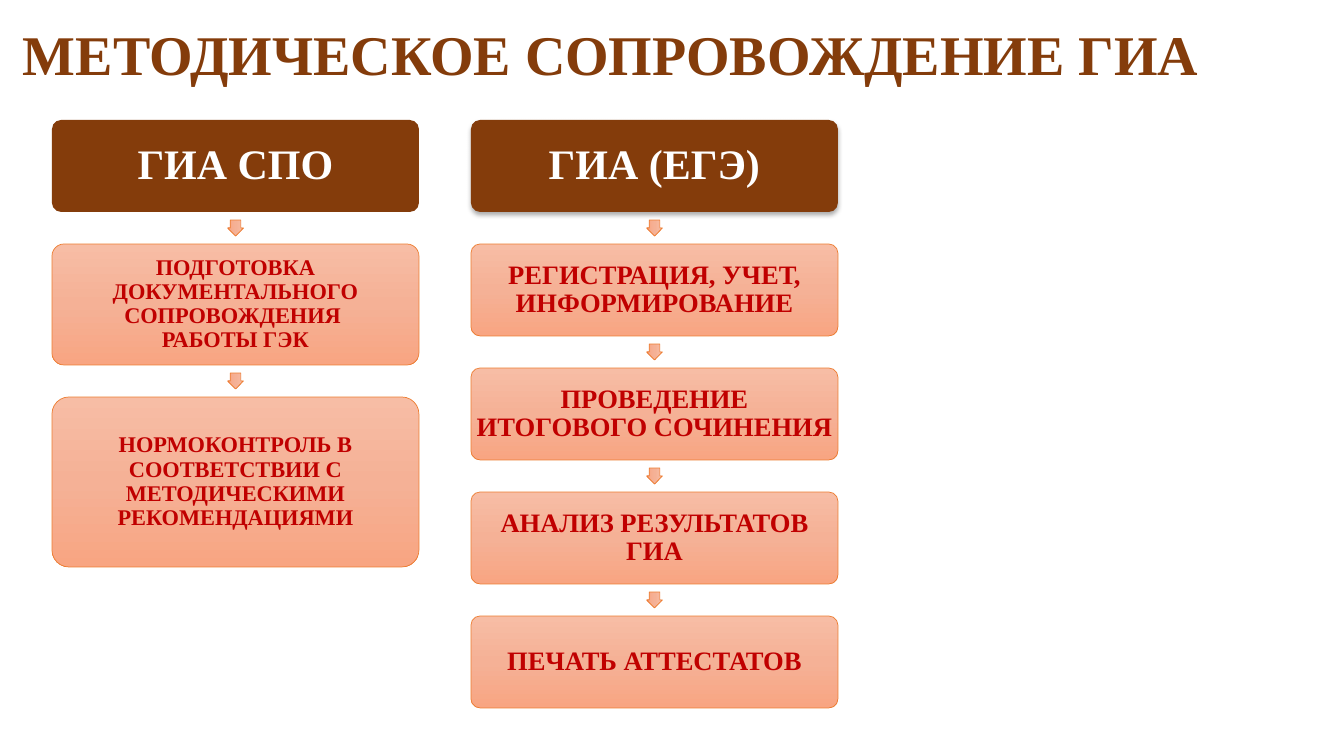
from copy import deepcopy
from dataclasses import dataclass

from lxml import etree
from pptx import Presentation
from pptx.dml.color import RGBColor
from pptx.enum.shapes import MSO_SHAPE
from pptx.enum.text import MSO_ANCHOR, PP_ALIGN
from pptx.oxml.ns import qn
from pptx.util import Emu, Pt

ROUNDED, ARROW = MSO_SHAPE.ROUNDED_RECTANGLE, MSO_SHAPE.RIGHT_ARROW
LEFT, CENTER = PP_ALIGN.LEFT, PP_ALIGN.CENTER
TOP, MIDDLE = MSO_ANCHOR.TOP, MSO_ANCHOR.MIDDLE

BROWN = RGBColor(0x84, 0x3C, 0x0B)
WHITE = RGBColor(0xFF, 0xFF, 0xFF)
RED = RGBColor(0xC0, 0x00, 0x00)
ORANGE = RGBColor(0xED, 0x7D, 0x31)
PEACH = (RGBColor(0xF7, 0xBD, 0xA5), RGBColor(0xF5, 0xB1, 0x96), RGBColor(0xF8, 0xA5, 0x82))

FONT = "Times New Roman"
EMU_PER_PX = 914400 / 100.8
COLUMN_TOP, COLUMN_WIDTH = 120, 367
HEADER_HEIGHT, GAP, ARROW_SIZE = 92, 32, 16


@dataclass
class Step:
    text: str
    height: int = HEADER_HEIGHT


@dataclass
class Column:
    header: str
    left: int
    step_size: int
    steps: list[Step]
    shadow: bool = False


COLUMNS = [
    Column("ГИА СПО", 52, 16, [
        Step("ПОДГОТОВКА ДОКУМЕНТАЛЬНОГО СОПРОВОЖДЕНИЯ \vРАБОТЫ ГЭК", 121),
        Step("НОРМОКОНТРОЛЬ В СООТВЕТСТВИИ С МЕТОДИЧЕСКИМИ РЕКОМЕНДАЦИЯМИ", 170),
    ]),
    Column("ГИА (ЕГЭ)", 471, 19, [
        Step("РЕГИСТРАЦИЯ, УЧЕТ, ИНФОРМИРОВАНИЕ"),
        Step("ПРОВЕДЕНИЕ ИТОГОВОГО СОЧИНЕНИЯ"),
        Step("АНАЛИЗ РЕЗУЛЬТАТОВ ГИА"),
        Step("ПЕЧАТЬ АТТЕСТАТОВ"),
    ], shadow=True),
]


def px(value: float) -> Emu:
    return Emu(round(value * EMU_PER_PX))


def write(shape, text: str, *, size: int, color: RGBColor, align=CENTER,
          anchor=MIDDLE, inset_x: int = 2, inset_y: int = 2) -> None:
    frame = shape.text_frame
    frame.word_wrap = True
    frame.vertical_anchor = anchor
    frame.margin_left = frame.margin_right = px(inset_x)
    frame.margin_top = frame.margin_bottom = px(inset_y)
    frame.text = text
    paragraph = frame.paragraphs[0]
    paragraph.alignment = align
    paragraph.line_spacing = 0.9
    for run in paragraph.runs:
        run.font.name = FONT
        run.font.size = Pt(size)
        run.font.bold = True
        run.font.color.rgb = color


def fill_peach(shape) -> None:
    fill = shape.fill
    fill.gradient()
    fill.gradient_angle = 270
    # A middle stop joins the two default ones
    stop_list = shape.element.spPr.find(f"{qn('a:gradFill')}/{qn('a:gsLst')}")
    stop_list.insert(1, deepcopy(stop_list[0]))
    for stop, color, position in zip(fill.gradient_stops, PEACH, (0, 0.5, 1)):
        stop.color.rgb = color
        stop.position = position
    shape.line.color.rgb = ORANGE
    shape.line.width = Pt(0.5)


def add_box(slide, left: int, top: int, height: int):
    box = slide.shapes.add_shape(ROUNDED, px(left), px(top), px(COLUMN_WIDTH), px(height))
    box.adjustments[0] = 0.1
    box.shadow.inherit = False
    return box


def add_soft_shadow(shape) -> None:
    effects = shape.element.spPr.find(qn("a:effectLst"))
    shadow = etree.SubElement(effects, qn("a:outerShdw"), blurRad=str(Pt(3.5)),
                              dist=str(Pt(2.2)), dir="5400000", rotWithShape="0")
    color = etree.SubElement(shadow, qn("a:srgbClr"), val="000000")
    etree.SubElement(color, qn("a:alpha"), val="32000")


def add_arrow(slide, column_left: int, gap_top: int) -> None:
    left = column_left + (COLUMN_WIDTH - ARROW_SIZE) / 2
    top = gap_top + (GAP - ARROW_SIZE) / 2
    arrow = slide.shapes.add_shape(ARROW, px(left), px(top), px(ARROW_SIZE), px(ARROW_SIZE))
    arrow.adjustments[0] = 0.67
    arrow.adjustments[1] = 0.5
    arrow.rotation = 90
    arrow.shadow.inherit = False
    fill_peach(arrow)


def add_column(slide, column: Column) -> None:
    # Header
    header = add_box(slide, column.left, COLUMN_TOP, HEADER_HEIGHT)
    header.fill.solid()
    header.fill.fore_color.rgb = BROWN
    header.line.fill.background()
    if column.shadow:
        add_soft_shadow(header)
    write(header, column.header, size=30, color=WHITE, inset_x=4, inset_y=4)

    # Steps, each below an arrow
    bottom = COLUMN_TOP + HEADER_HEIGHT
    for step in column.steps:
        add_arrow(slide, column.left, bottom)
        box = add_box(slide, column.left, bottom + GAP, step.height)
        fill_peach(box)
        write(box, step.text, size=column.step_size, color=RED)
        bottom += GAP + step.height


def main() -> None:
    deck = Presentation()
    deck.slide_width, deck.slide_height = px(1344), px(756)
    slide = deck.slides.add_slide(deck.slide_layouts[6])

    for column in COLUMNS:
        add_column(slide, column)

    # Title
    title = slide.shapes.add_textbox(px(13), px(22), px(1210), px(126))
    write(title, "МЕТОДИЧЕСКОЕ СОПРОВОЖДЕНИЕ ГИА", size=40, color=BROWN,
          align=LEFT, anchor=TOP, inset_x=10, inset_y=5)

    deck.save("out.pptx")


if __name__ == "__main__":
    main()
